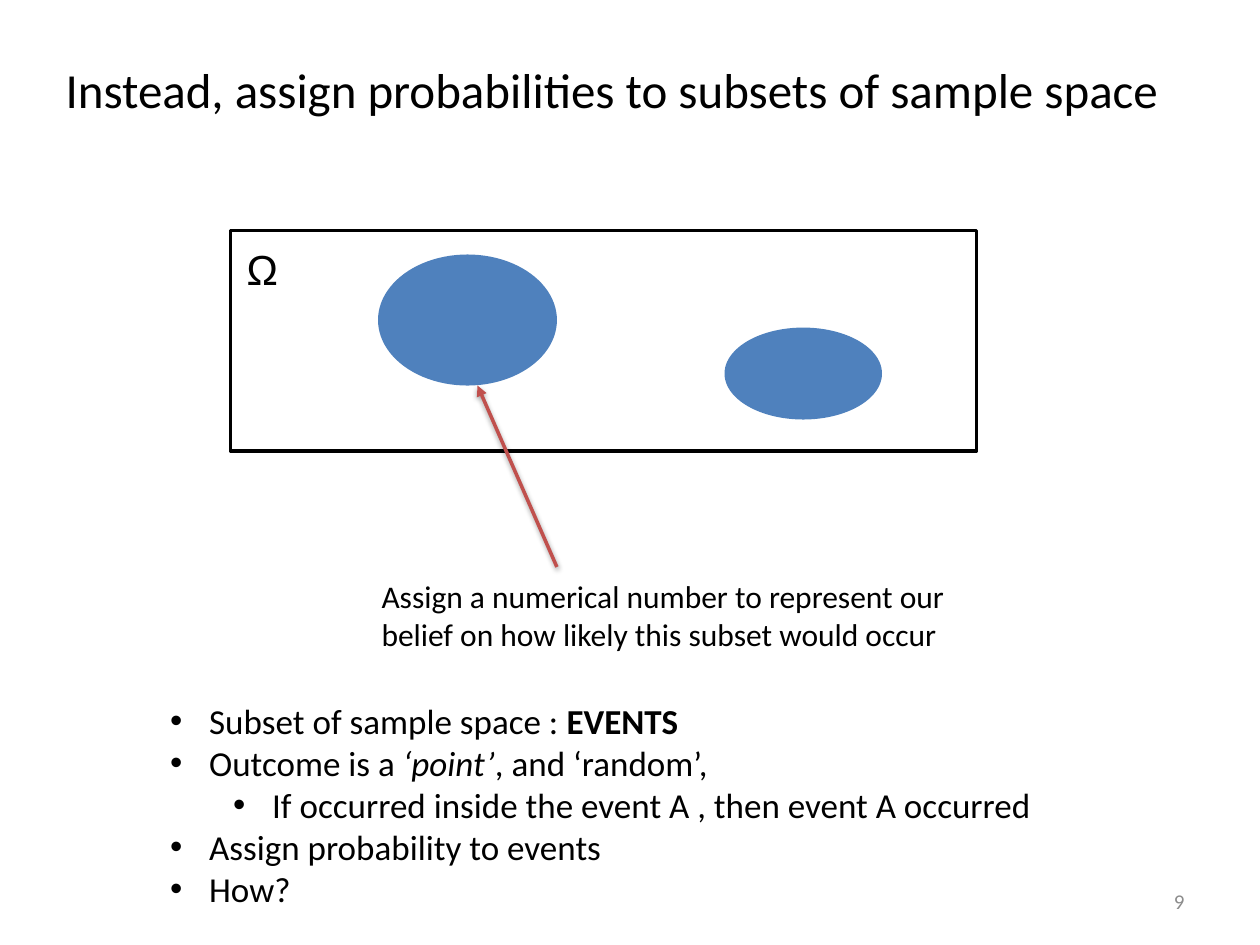
from lxml.etree import SubElement
from pptx import Presentation
from pptx.dml.color import RGBColor
from pptx.enum.shapes import MSO_CONNECTOR, MSO_SHAPE
from pptx.enum.text import MSO_ANCHOR, MSO_AUTO_SIZE, PP_ALIGN
from pptx.oxml.ns import qn
from pptx.util import Inches, Pt

BLACK = RGBColor(0x00, 0x00, 0x00)
WHITE = RGBColor(0xFF, 0xFF, 0xFF)
GRAY = RGBColor(0x8C, 0x8C, 0x8C)
BLUE = RGBColor(0x4F, 0x81, 0xBD)
RED = RGBColor(0xC0, 0x50, 0x4D)

WIDTH, HEIGHT = 10, 7.5
INDENT, LEVEL_STEP = 0.31, 0.5

# (level, [(text, style)])
POINTS = [
    (0, [("Subset of sample space : ", ""), ("EVENTS", "bold")]),
    (0, [("Outcome is a ", ""), ("‘point’", "italic"), (", and ‘random’,", "")]),
    (1, [("If occurred inside the event A , then event A occurred", "")]),
    (0, [("Assign probability to events", "")]),
    (0, [("How?", "")]),
]


def place(sp, left, top, width, height):
    sp.left, sp.top = Inches(left), Inches(top)
    sp.width, sp.height = Inches(width), Inches(height)


def set_font(r, size, color=BLACK, name="Calibri"):
    r.font.name, r.font.size = name, Pt(size)
    r.font.color.rgb = color


def write(sp, text, size, color=BLACK, name="Calibri",
          align=PP_ALIGN.LEFT, anchor=MSO_ANCHOR.TOP):
    tf = sp.text_frame
    tf.text = text
    tf.word_wrap = True
    tf.auto_size = MSO_AUTO_SIZE.NONE
    tf.vertical_anchor = anchor
    p = tf.paragraphs[0]
    p.alignment = align
    set_font(p.runs[0], size, color, name)


def add_label(s, box, text, size, **style):
    sp = s.shapes.add_textbox(*map(Inches, box))
    write(sp, text, size, **style)


def add_region(s, kind, box, fill, line=None):
    sp = s.shapes.add_shape(kind, *map(Inches, box))
    sp.shadow.inherit = False
    sp.fill.solid()
    sp.fill.fore_color.rgb = fill
    if line is None:
        sp.line.fill.background()
    else:
        sp.line.color.rgb = line
        sp.line.width = Pt(2)


def add_arrow(s, start, end):
    """Red arrow with a soft shadow straight below it."""
    c = s.shapes.add_connector(MSO_CONNECTOR.STRAIGHT, *map(Inches, start + end))
    c.line.color.rgb = RED
    c.line.width = Pt(2)
    SubElement(c.line._get_or_add_ln(), qn("a:tailEnd"), type="triangle")
    effects = SubElement(c._element.spPr, qn("a:effectLst"))
    shadow = SubElement(effects, qn("a:outerShdw"), blurRad=str(Pt(3.1)),
                        dist=str(Pt(1.6)), dir="5400000", rotWithShape="0")
    color = SubElement(shadow, qn("a:srgbClr"), val=str(BLACK))
    SubElement(color, qn("a:alpha"), val="38000")


def set_bullet(p, level):
    p.level = level
    pPr = p._p.get_or_add_pPr()
    pPr.set("marL", str(Inches(INDENT + level * LEVEL_STEP)))
    pPr.set("indent", str(-Inches(INDENT)))
    SubElement(pPr, qn("a:buFont"), typeface="Arial")
    SubElement(pPr, qn("a:buChar"), char="•")


def fill_list(sp, points, size):
    tf = sp.text_frame
    tf.word_wrap = True
    tf.auto_size = MSO_AUTO_SIZE.NONE
    for i, (level, parts) in enumerate(points):
        p = tf.add_paragraph() if i else tf.paragraphs[0]
        p.space_before = Pt(0)
        set_bullet(p, level)
        for text, style in parts:
            r = p.add_run()
            r.text = text
            set_font(r, size)
            r.font.bold = style == "bold"
            r.font.italic = style == "italic"


def main():
    prs = Presentation()
    prs.slide_width, prs.slide_height = Inches(WIDTH), Inches(HEIGHT)
    s = prs.slides.add_slide(prs.slide_layouts[1])
    title, body = s.placeholders

    place(title, 0.42, 0.42, 9, 0.6)
    write(title, "Instead, assign probabilities to subsets of sample space", 28)
    place(body, 1.25, 5.5, 8, 1.78)
    fill_list(body, POINTS, 20)

    add_region(s, MSO_SHAPE.RECTANGLE, (1.83, 1.83, 5.92, 1.75), WHITE, BLACK)
    add_label(s, (1.86, 1.88, 0.54, 0.5), "Ω", 24, name="Arial")
    for event in [(3, 2.02, 1.42, 1.04), (5.75, 2.6, 1.25, 0.73)]:
        add_region(s, MSO_SHAPE.OVAL, event, BLUE)

    add_arrow(s, (4.42, 4.5), (3.79, 3.06))
    add_label(s, (2.93, 4.53, 4.73, 0.71),
              "Assign a numerical number to represent our belief "
              "on how likely this subset would occur", 18)
    add_label(s, (7.17, 6.95, 2.33, 0.4), "9", 12, color=GRAY,
              align=PP_ALIGN.RIGHT, anchor=MSO_ANCHOR.MIDDLE)
    prs.save("out.pptx")


if __name__ == "__main__":
    main()
